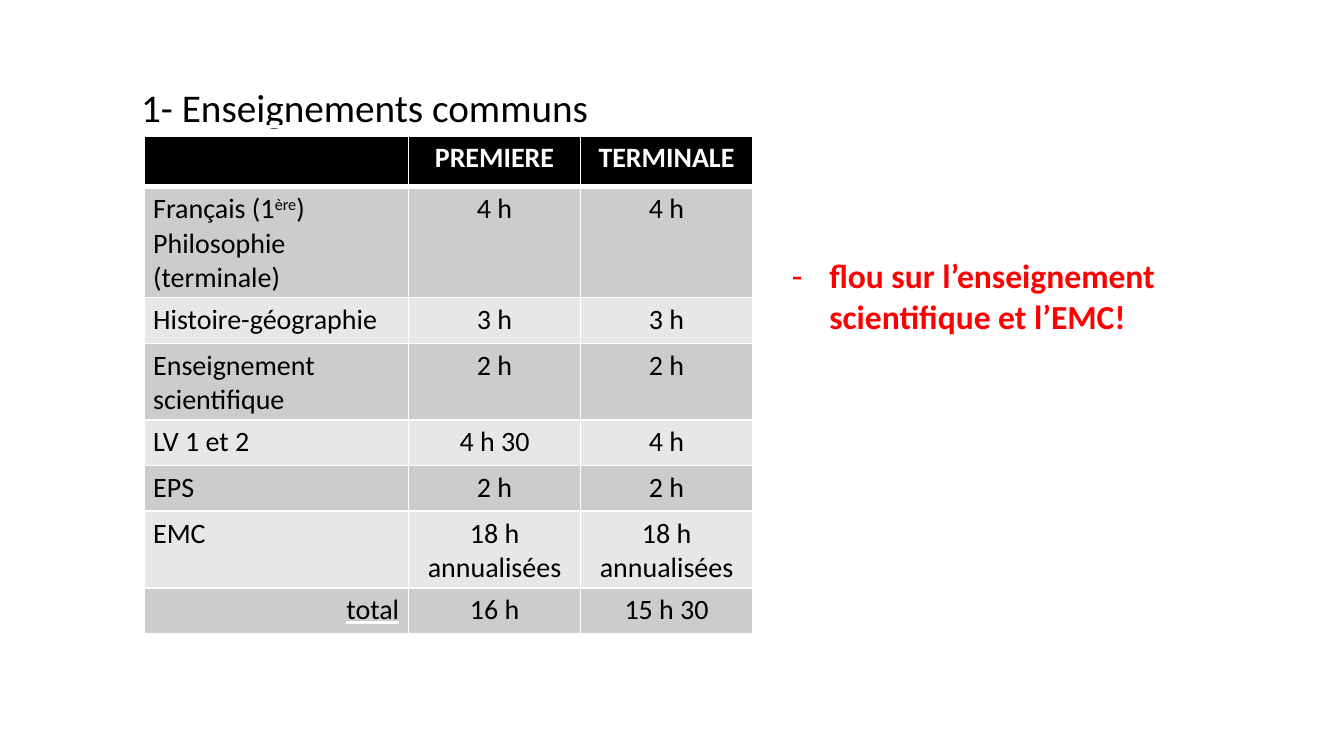
from lxml import etree
from pptx import Presentation, util as u
from pptx.dml.color import RGBColor
from pptx.enum import text
from pptx.oxml import ns

PX = 9144  # 100 px to the inch
BLACK = RGBColor(0x00, 0x00, 0x00)
WHITE = RGBColor(0xFF, 0xFF, 0xFF)
RED = RGBColor(0xFF, 0x00, 0x00)
DARK_BAND = RGBColor(0xCC, 0xCC, 0xCC)
LIGHT_BAND = RGBColor(0xE7, 0xE7, 0xE7)
MARGINS = dict(margin_left=7 * PX, margin_top=4 * PX,
               margin_right=7 * PX, margin_bottom=4 * PX)
CELL_MARGINS = dict(MARGINS, margin_bottom=2 * PX)


def add_run(paragraph, words, size, color=BLACK, **formats):
    run = paragraph.add_run()
    run.text = words
    run.font.color.rgb = color
    if formats.get("underline"):  # the underline is white
        line_fill = etree.SubElement(run._r.get_or_add_rPr(), ns.qn("a:uFill"))
        solid = etree.SubElement(line_fill, ns.qn("a:solidFill"))
        etree.SubElement(solid, ns.qn("a:srgbClr"), val=str(WHITE))
    for key, value in dict(name="Calibri", size=u.Pt(size), **formats).items():
        setattr(run.font, key, value)
    return run


def place(holder, left, top, width, height):
    for key, value in dict(left=left, top=top, width=width, height=height).items():
        setattr(holder, key, value * PX)
    frame = holder.text_frame
    for key, value in dict(MARGINS, word_wrap=True, auto_size=text.MSO_AUTO_SIZE.NONE,
                           vertical_anchor=text.MSO_ANCHOR.TOP).items():
        setattr(frame, key, value)
    paragraph = frame.paragraphs[0]
    paragraph.alignment = text.PP_ALIGN.LEFT
    paragraph.space_before = u.Pt(0)
    return paragraph


prs = Presentation()
prs.slide_width = 1000 * PX
prs.slide_height = prs.slide_width * 9 // 16
slide = prs.slides.add_slide(prs.slide_layouts[1])
title, remark = slide.placeholders

# Heading
heading = place(title, 98, 58, 691, 42)
add_run(heading, "1- ", 21)
add_run(heading, "Enseignements communs", 21, underline=True)

# Remark on the right
remark_line = place(remark, 582, 186, 338, 73)
pPr = remark_line._p.get_or_add_pPr()
pPr.set("marL", str(28 * PX))
pPr.set("indent", str(-28 * PX))
bullet_color = etree.SubElement(pPr, ns.qn("a:buClr"))
etree.SubElement(bullet_color, ns.qn("a:srgbClr"), val=str(RED))
etree.SubElement(pPr, ns.qn("a:buChar"), char="-")
add_run(remark_line, "flou sur l’enseignement scientifique et l’EMC!", 18, RED, bold=True)

# Hours per subject
hours = [
    ("", "PREMIERE", "TERMINALE"),
    ("Français (1^ère^)\nPhilosophie (terminale)", "4 h", "4 h"),
    ("Histoire-géographie", "3 h", "3 h"),
    ("Enseignement scientifique", "2 h", "2 h"),
    ("LV 1 et 2", "4 h 30", "4 h"),
    ("EPS", "2 h", "2 h"),
    ("EMC", "18 h annualisées", "18 h annualisées"),
    ("total", "16 h", "15 h 30"),
]
row_heights = [38, 82, 34, 57, 34, 34, 57, 34]
column_widths = [197, 128, 128]
timetable = slide.shapes.add_table(len(hours), 3, 107 * PX, 101 * PX,
                                   sum(column_widths) * PX, sum(row_heights) * PX).table
for column, width in zip(timetable.columns, column_widths):
    column.width = width * PX

for r, (subject_hours, height) in enumerate(zip(hours, row_heights)):
    timetable.rows[r].height = height * PX
    header, total = r == 0, r == len(hours) - 1
    for c, words in enumerate(subject_hours):
        cell = timetable.cell(r, c)
        for key, value in CELL_MARGINS.items():
            setattr(cell, key, value)

        # White rules, thick under the header
        tcPr = cell._tc.get_or_add_tcPr()
        for side in "LRTB":
            thick = (r, side) in ((0, "B"), (1, "T"))
            rule = etree.SubElement(tcPr, ns.qn("a:ln" + side),
                                    w=str(u.Pt(3 if thick else 0.96)))
            rule_fill = etree.SubElement(rule, ns.qn("a:solidFill"))
            etree.SubElement(rule_fill, ns.qn("a:srgbClr"), val=str(WHITE))
        cell.fill.solid()
        cell.fill.fore_color.rgb = BLACK if header else DARK_BAND if r % 2 else LIGHT_BAND

        # Text, with superscripts between carets
        for i, line in enumerate(words.split("\n") if words else []):
            paragraph = cell.text_frame.paragraphs[0] if i == 0 else cell.text_frame.add_paragraph()
            if c:
                paragraph.alignment = text.PP_ALIGN.CENTER
            elif total:
                paragraph.alignment = text.PP_ALIGN.RIGHT
            for k, part in enumerate(line.split("^")):
                run = add_run(paragraph, part, 15, WHITE if header else BLACK,
                              bold=header, underline=total and c == 0)
                if k % 2:
                    run._r.get_or_add_rPr().set("baseline", "30000")

prs.save("out.pptx")
